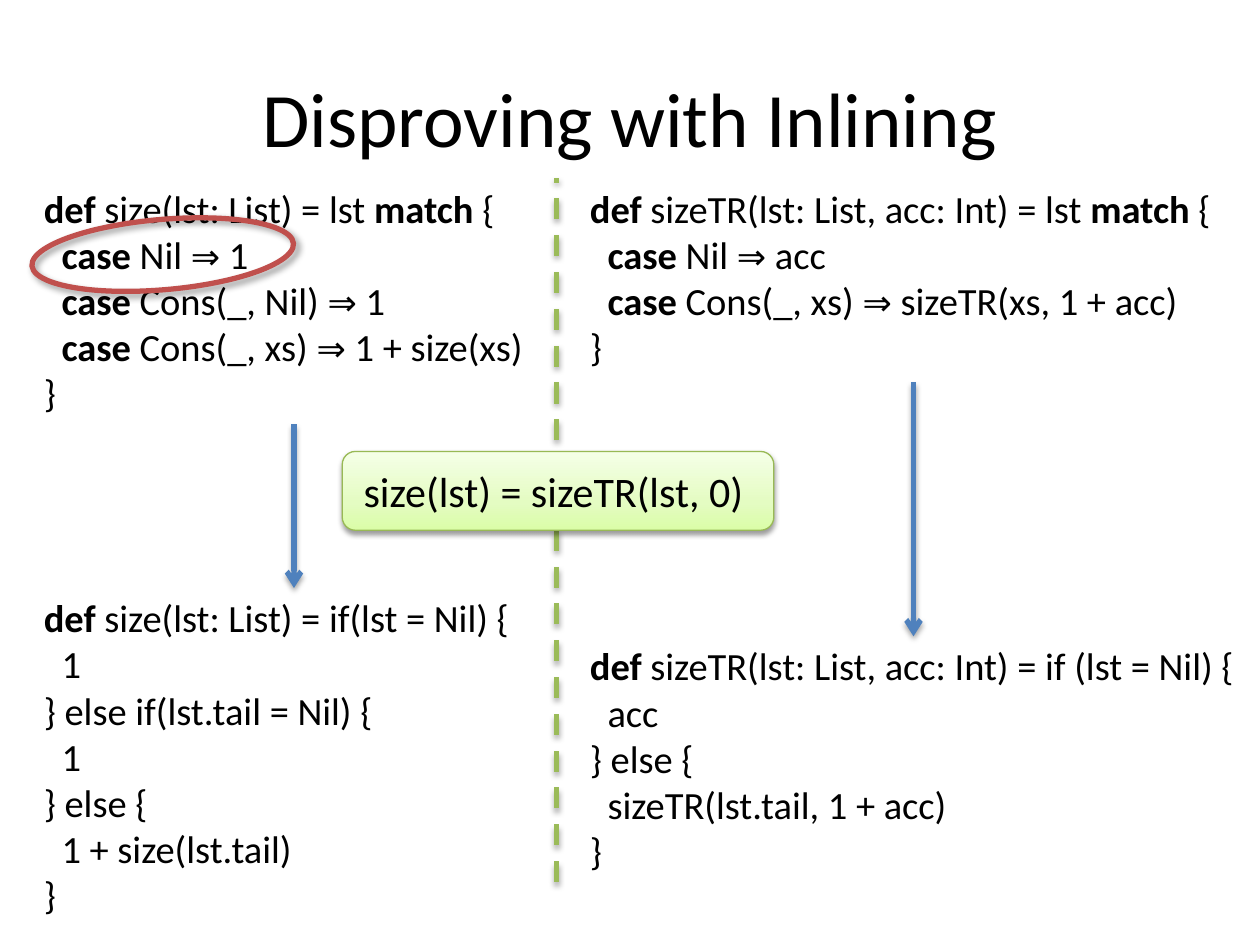
from copy import deepcopy
from dataclasses import dataclass

from lxml.etree import SubElement
from pptx import Presentation
from pptx.dml.color import RGBColor
from pptx.enum.dml import MSO_LINE
from pptx.enum.shapes import MSO_CONNECTOR, MSO_SHAPE
from pptx.enum.text import MSO_ANCHOR, MSO_AUTO_SIZE, PP_ALIGN
from pptx.oxml.ns import qn
from pptx.util import Inches, Pt


@dataclass(frozen=True)
class Theme:
    font: str = "Calibri"
    text: RGBColor = RGBColor(0x00, 0x00, 0x00)
    green: RGBColor = RGBColor(0x9B, 0xBB, 0x59)
    blue: RGBColor = RGBColor(0x4F, 0x81, 0xBD)
    red: RGBColor = RGBColor(0xC0, 0x50, 0x4D)
    callout_line: RGBColor = RGBColor(0x98, 0xB9, 0x55)
    callout_stops: tuple = ((0, "DAFDA7"), (0.35, "E4FCC2"), (1, "F5FFE7"))
    title_size: Pt = Pt(44)
    callout_size: Pt = Pt(24)
    code_size: Pt = Pt(22)
    symbol_size: Pt = Pt(20)
    heavy_line: Pt = Pt(3)
    thin_line: Pt = Pt(0.75)


theme = Theme()
presentation = Presentation()
presentation.slide_width, presentation.slide_height = Inches(10), Inches(7.5)
slide = presentation.slides.add_slide(presentation.slide_layouts[6])
shapes = slide.shapes

# The slide is a grid of 120 columns by 90 rows.
COLUMN = presentation.slide_width / 120
ROW = presentation.slide_height / 90
CODE_INDENT = Inches(0.14)


def place(left, top, width, height):
    """Turn columns and rows into slide lengths."""
    return [round(n * unit) for n, unit in
            ((left, COLUMN), (top, ROW), (width, COLUMN), (height, ROW))]


def add_shadow(shape, blur, distance, angle, opacity):
    """Give a shape a black outer shadow; call it after fill and line are set."""
    effects = SubElement(shape._element.spPr, qn("a:effectLst"))
    shadow = SubElement(effects, qn("a:outerShdw"), blurRad=str(Pt(blur)),
                        dist=str(Pt(distance)), dir=str(angle * 60000), rotWithShape="0")
    color = SubElement(shadow, qn("a:srgbClr"), val="000000")
    SubElement(color, qn("a:alpha"), val=str(opacity * 1000))


# Title
title = shapes.add_textbox(*place(6, 3.6, 108, 15))
title.text_frame.word_wrap = True
title.text_frame.vertical_anchor = MSO_ANCHOR.MIDDLE
paragraph = title.text_frame.paragraphs[0]
paragraph.text = "Disproving with Inlining"
paragraph.alignment = PP_ALIGN.CENTER
paragraph.font.name, paragraph.font.size = theme.font, theme.title_size
paragraph.font.color.rgb = theme.text

# Code blocks: asterisks enclose keywords, a leading tab marks an indented line
code_blocks = {
    "size match": ((3, 17, 50, 23.4), """*def* size(lst: List) = lst *match* {
\t*case* Nil ⇒ 1
\t*case* Cons(_, Nil) ⇒ 1
\t*case* Cons(_, xs) ⇒ 1 + size(xs)
}"""),
    "sizeTR match": ((55, 17, 64, 19.4), """*def* sizeTR(lst: List, acc: Int) = lst *match* {
\t*case* Nil ⇒ acc
\t*case* Cons(_, xs) ⇒ sizeTR(xs, 1 + acc)
}"""),
    "size inlined": ((3, 56, 50, 32.3), """*def* size(lst: List) = if(lst = Nil) {
\t1
} else if(lst.tail = Nil) {
\t1
} else {
\t1 + size(lst.tail)
}"""),
    "sizeTR inlined": ((55, 60.6, 64, 23.4), """*def* sizeTR(lst: List, acc: Int) = if (lst = Nil) {
\tacc
} else {
\tsizeTR(lst.tail, 1 + acc)
}"""),
}
code_boxes = {}
for block, (area, code) in code_blocks.items():
    box = code_boxes[block] = shapes.add_textbox(*place(*area))
    frame = box.text_frame
    frame.word_wrap = True
    frame.auto_size = MSO_AUTO_SIZE.SHAPE_TO_FIT_TEXT
    for row, line in enumerate(code.split("\n")):
        paragraph = frame.add_paragraph() if row else frame.paragraphs[0]
        paragraph.font.name, paragraph.font.size = theme.font, theme.code_size
        paragraph.font.color.rgb = theme.text
        if line.startswith("\t"):
            paragraph._p.get_or_add_pPr().set("marL", str(CODE_INDENT))
        for position, piece in enumerate(line.strip().split("*")):
            for part in filter(None, piece.partition("⇒")):
                run = paragraph.add_run()
                run.text = part
                if position % 2:
                    run.font.bold = True
                if part == "⇒":
                    run.font.size = theme.symbol_size

# Divider and the arrows from each definition to its inlined form
x, top, _, bottom = place(53, 17, 0, 84)
divider = shapes.add_connector(MSO_CONNECTOR.STRAIGHT, x, bottom, x, top)
divider.line.color.rgb = theme.green
divider.line.dash_style = MSO_LINE.DASH
arrows = []
for function in ("size", "sizeTR"):
    start, end = code_boxes[f"{function} match"], code_boxes[f"{function} inlined"]
    center = start.left + start.width // 2
    arrow = shapes.add_connector(MSO_CONNECTOR.STRAIGHT, center, start.top + start.height,
                                 center, end.top)
    arrow.begin_connect(start, 2)
    arrow.end_connect(end, 0)
    arrow.line.color.rgb = theme.blue
    SubElement(arrow.line._get_or_add_ln(), qn("a:tailEnd"), type="arrow")
    arrows.append(arrow)
for connector in (divider, *arrows):
    connector.line.width = theme.heavy_line
    add_shadow(connector, 3.1, 1.8, 90, 35)

# Claim to disprove
callout = shapes.add_shape(MSO_SHAPE.ROUNDED_RECTANGLE, *place(32.6, 43, 41.1, 7.5))
callout.fill.gradient()
callout.fill.gradient_angle = 90
first_stop = next(callout._element.spPr.iter(qn("a:gs")))
first_stop.addnext(deepcopy(first_stop))
for stop, (position, color) in zip(callout.fill.gradient_stops, theme.callout_stops):
    stop.position = position
    stop.color.rgb = RGBColor.from_string(color)
callout.line.color.rgb = theme.callout_line
callout.line.width = theme.thin_line
add_shadow(callout, 3.1, 1.6, 90, 38)
callout.text_frame.vertical_anchor = MSO_ANCHOR.MIDDLE
callout.text_frame.margin_right = Inches(0.17)
paragraph = callout.text_frame.paragraphs[0]
paragraph.text = "size(lst) = sizeTR(lst, 0)"
paragraph.alignment = PP_ALIGN.CENTER
paragraph.font.name, paragraph.font.size = theme.font, theme.callout_size
paragraph.font.color.rgb = theme.text

# Ring around the Nil case
ring = shapes.add_shape(MSO_SHAPE.OVAL, *place(3, 20.9, 25, 6.7))
ring.rotation = -4.9
ring.fill.background()
ring.line.color.rgb = theme.red
ring.line.width = theme.heavy_line
add_shadow(ring, 4, 3, 45, 40)

presentation.save("out.pptx")
